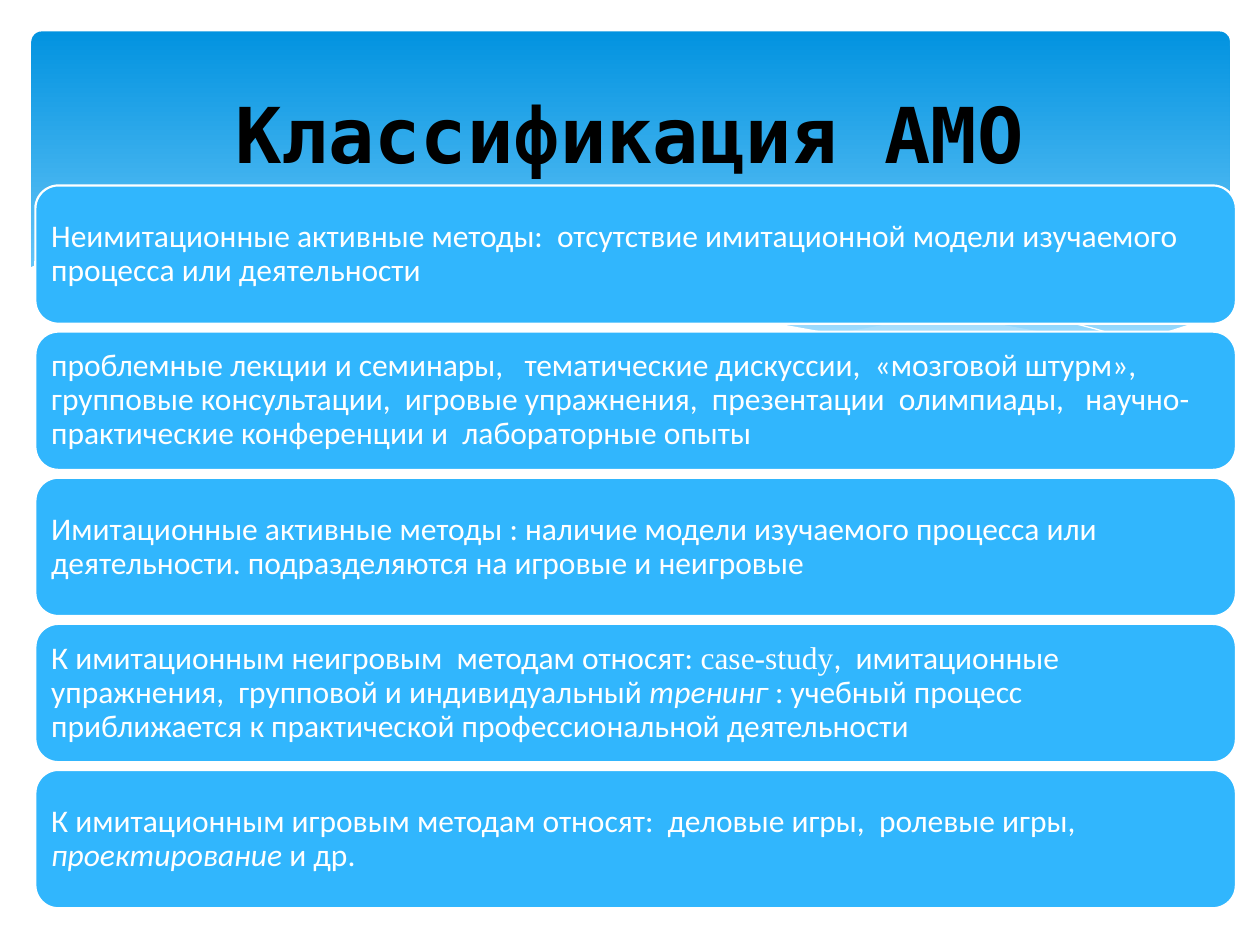
from pptx import Presentation
from pptx import util as u
from pptx.dml.color import RGBColor
from pptx.enum import shapes, text
from pptx.oxml.ns import qn
from lxml import etree

WHITE, SKY, PALE = "FFFFFF", "31B6FD", "C6E7FC"
BODY, LATIN, HEADING = "Calibri", "Times New Roman", "DejaVu Sans Mono"

# Wave outlines, in points
RIGHT_WAVE = [
    (702.7, 144), (673.2, 149), (641.5, 155.5), (599, 165.6), (560.9, 174.2),
    (524.9, 182.2), (475.9, 190.8), (507.6, 195.1), (536.4, 198),
    (562.3, 199.4), (586.1, 200.2), (614.9, 198.7), (640.1, 195.8),
    (663.1, 190.8), (683.3, 185), (702.7, 177.8)]
LONG_WAVE = [
    (643, 196.6), (602.6, 190.8), (558, 182.9), (508.3, 172.8),
    (452.9, 159.8), (409.7, 149.8), (370.1, 142.6), (334.8, 137.5),
    (302.4, 134.6), (273.6, 133.2), (236.2, 134.6), (205.9, 137.5),
    (246.2, 143.3), (290.9, 151.9), (323.3, 159.8), (381.6, 172.8),
    (432.7, 183.6), (478.8, 191.5), (519.8, 197.3), (556.6, 199.4),
    (589, 200.2), (617, 199.4)]
FALLING_LINE = [
    (222.5, 140.4), (247.7, 136.8), (278.6, 134.6), (311.8, 134.6),
    (352.1, 136.8), (400.3, 141.8), (457.9, 149.8), (523.4, 162.7),
    (572.4, 173.5), (625.7, 187.9), (653, 195.8)]
RISING_LINE = [
    (441.4, 185), (483.8, 173.5), (538.6, 160.6), (580.3, 151.2),
    (623.5, 143.3), (655.2, 138.2), (702, 133.2)]
WHITE_WAVE = [
    (703.4, 177.1), (684, 184.3), (662.4, 190.8), (638.6, 195.1), (612, 198),
    (582.5, 199.4), (547.9, 198), (509.8, 194.4), (466.6, 188.6),
    (416.9, 180), (362.2, 167.8), (321.8, 158.4), (281.5, 149),
    (244.8, 141.8), (210.2, 136.8), (180, 133.9), (139, 132.5),
    (105.1, 133.2), (76.3, 136.1), (54.7, 140.4), (37.4, 144.7), (25.9, 149),
    (16.6, 153.4), (16.6, 236.9), (703.4, 236.9)]

# Card texts: runs of (text, font, italic)
CARDS = [
    [("Неимитационные активные методы:  отсутствие имитационной модели "
      "изучаемого процесса или деятельности", BODY, False)],
    [("проблемные лекции и семинары,   тематические дискуссии,  «мозговой "
      "штурм»,  групповые консультации,  игровые упражнения,  презентации  "
      "олимпиады,   научно-практические конференции и  лабораторные опыты",
      BODY, False)],
    [("Имитационные активные методы : наличие модели изучаемого процесса или "
      "деятельности. подразделяются на игровые и неигровые", BODY, False)],
    [("К имитационным неигровым  методам относят: ", BODY, False),
     ("case-study", LATIN, False),
     (",  имитационные упражнения,  групповой и индивидуальный ", BODY, False),
     ("тренинг", BODY, True),
     (" : учебный процесс приближается к практической профессиональной "
      "деятельности", BODY, False)],
    [("К имитационным игровым методам относят:  деловые игры,  ролевые игры,   ",
      BODY, False),
     ("проектирование", BODY, True),
     (" и др.", BODY, False)],
]


def rgb(value):
    return RGBColor.from_string(value)


class Deck:
    """Holds the style and the current slide."""

    def __init__(self, prs):
        self.s = prs.slides.add_slide(prs.slide_layouts[5])

    def run(self, p, words, font, size, color, bold=False, italic=False):
        r = p.add_run()
        r.text = words
        r.font.name, r.font.size = font, u.Pt(size)
        r.font.bold, r.font.italic = bold, italic
        r.font.color.rgb = rgb(color)

    def rounded(self, left, top, width, height):
        sp = self.s.shapes.add_shape(
            shapes.MSO_SHAPE.ROUNDED_RECTANGLE,
            u.Pt(left), u.Pt(top), u.Pt(width), u.Pt(height))
        sp.shadow.inherit = False
        return sp

    def header(self, left, top, width, height):
        sp = self.rounded(left, top, width, height)
        sp.adjustments[0] = 0.03
        sp.line.fill.background()
        sp.fill.gradient()
        sp.fill.gradient_angle = 270
        stops = zip(sp.fill.gradient_stops, [(0, "0293E0"), (0.9, "83D3FE")])
        for stop, (position, color) in stops:
            stop.position, stop.color.rgb = position, rgb(color)

    def outline(self, points, closed):
        fb = self.s.shapes.build_freeform(*points[0], scale=u.Pt(1))
        fb.add_line_segments(points[1:], close=closed)
        sp = fb.convert_to_shape()
        sp.shadow.inherit = False
        return sp

    def wave(self, points, color, opacity=100):
        sp = self.outline(points, True)
        sp.line.fill.background()
        sp.fill.solid()
        sp.fill.fore_color.rgb = rgb(color)
        if opacity < 100:
            clr = sp.element.spPr.find(".//" + qn("a:srgbClr"))
            etree.SubElement(clr, qn("a:alpha"), val=str(opacity * 1000))

    def curve(self, points):
        sp = self.outline(points, False)
        sp.fill.background()
        sp.line.color.rgb = rgb(WHITE)
        sp.line.width = u.Pt(0)

    def card(self, left, top, width, height, runs):
        sp = self.rounded(left, top, width, height)
        sp.fill.solid()
        sp.fill.fore_color.rgb = rgb(SKY)
        sp.line.color.rgb = rgb(WHITE)
        sp.line.width = u.Pt(1.25)
        tf = sp.text_frame
        tf.word_wrap = True
        tf.vertical_anchor = text.MSO_ANCHOR.MIDDLE
        # The rounded corners already inset the text by about 4 pt
        tf.margin_left = tf.margin_right = u.Pt(5.2)
        tf.margin_top = tf.margin_bottom = u.Pt(5.2)
        p = tf.paragraphs[0]
        p.alignment = text.PP_ALIGN.LEFT
        p.line_spacing = 0.9
        for words, font, italic in runs:
            self.run(p, words, font, 18, WHITE, italic=italic)

    def title(self, left, top, width, height, words):
        sp = self.s.shapes.title
        sp.left, sp.top = u.Pt(left), u.Pt(top)
        sp.width, sp.height = u.Pt(width), u.Pt(height)
        tf = sp.text_frame
        tf.auto_size = text.MSO_AUTO_SIZE.NONE
        tf.vertical_anchor = text.MSO_ANCHOR.MIDDLE
        p = tf.paragraphs[0]
        p.alignment = text.PP_ALIGN.CENTER
        self.run(p, words, HEADING, 44, "000000", bold=True)
        # Bring the title in front of the header
        sp.element.getparent().append(sp.element)


def main():
    prs = Presentation()
    prs.slide_width, prs.slide_height = u.Pt(720), u.Pt(540)
    deck = Deck(prs)

    # Header with waves
    deck.header(18, 18, 684.7, 194.4)
    deck.wave(RIGHT_WAVE, PALE, 29)
    deck.wave(LONG_WAVE, PALE, 40)
    deck.curve(FALLING_LINE)
    deck.curve(RISING_LINE)
    deck.wave(WHITE_WAVE, WHITE)

    # Stack of cards
    for i, runs in enumerate(CARDS):
        deck.card(20.2, 106 + 83.5 * i, 686, 79, runs)

    # Title
    deck.title(36, 26.6, 648, 98.6, "Классификация АМО")
    prs.save("out.pptx")


if __name__ == "__main__":
    main()
